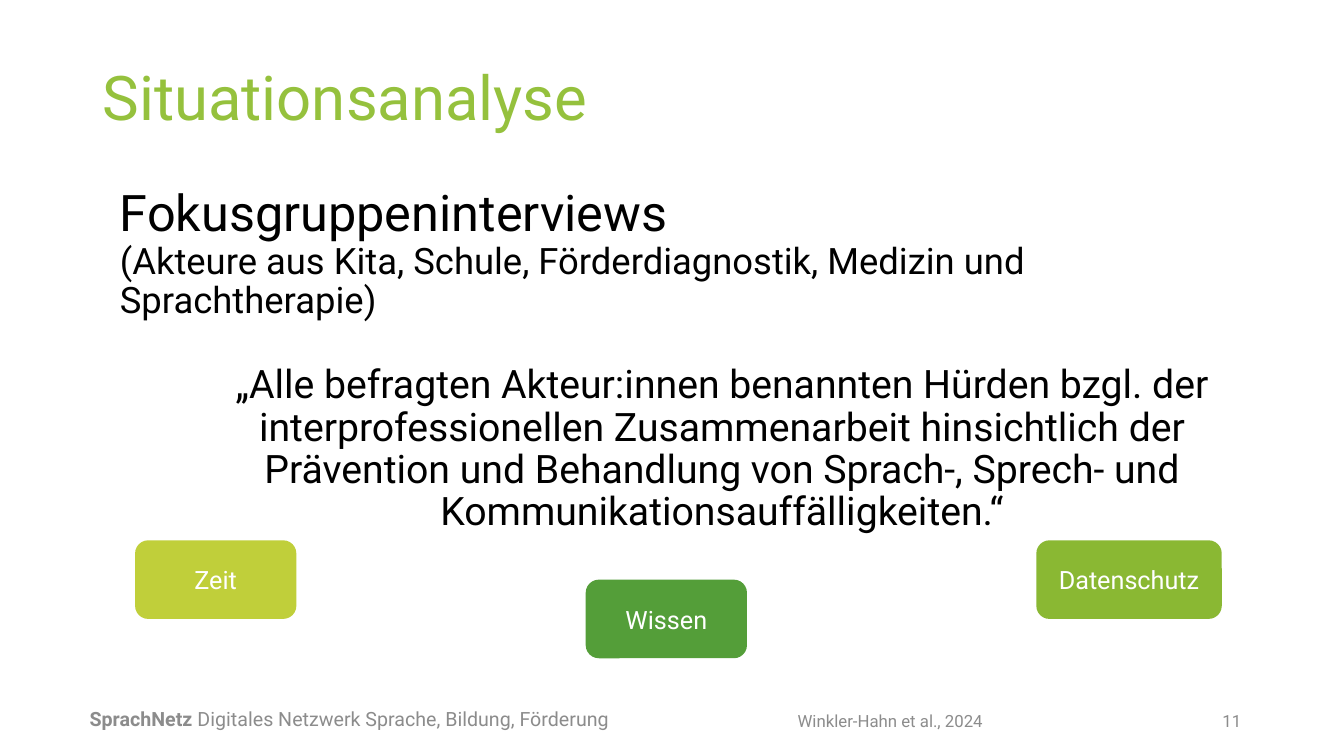
from dataclasses import dataclass

from pptx import Presentation
from pptx.dml.color import RGBColor
from pptx.enum.shapes import MSO_SHAPE
from pptx.enum.text import MSO_ANCHOR, PP_ALIGN
from pptx.util import Inches, Pt


@dataclass(frozen=True)
class Theme:
    font: str = "Roboto"
    title: str = "95C13D"
    body: str = "000000"
    muted: str = "8C8C8C"
    label: str = "FFFFFF"
    lime: str = "C0CF3A"
    forest: str = "549E39"
    leaf: str = "8AB833"
    title_size: int = 44
    heading_size: int = 36
    quote_size: int = 28
    detail_size: int = 26
    label_size: int = 18
    footer_size: int = 14
    note_size: int = 12


class SlideBuilder:
    """Places styled text and labels on a slide using a grid of 100 columns and 100 rows."""

    def __init__(self, deck, theme):
        self.deck = deck
        self.theme = theme
        self.slide = deck.slides.add_slide(deck.slide_layouts[6])

    def place(self, left, top, width, height):
        column = self.deck.slide_width / 100
        row = self.deck.slide_height / 100
        return (round(left * column), round(top * row),
                round(width * column), round(height * row))

    def style(self, span, size, color, bold=False):
        span.font.name = self.theme.font
        span.font.size = Pt(size)
        span.font.bold = bold
        span.font.color.rgb = RGBColor.from_string(color)

    def text(self, area, text, sizes, color, align=PP_ALIGN.LEFT,
             anchor=MSO_ANCHOR.MIDDLE, spacing=1.0):
        box = self.slide.shapes.add_textbox(*self.place(*area))
        frame = box.text_frame
        frame.word_wrap = True
        frame.vertical_anchor = anchor
        para = frame.paragraphs[0]
        para.text = text
        para.alignment = align
        para.line_spacing = spacing
        for span, size in zip(para.runs, sizes):
            self.style(span, size, color)
        return para

    def footer(self, area, name, claim):
        size, color = self.theme.footer_size, self.theme.muted
        para = self.text(area, name, [size], color)
        para.runs[0].font.bold = True
        span = para.add_run()
        span.text = claim
        self.style(span, size, color)

    def label(self, area, text, fill):
        box = self.slide.shapes.add_shape(MSO_SHAPE.ROUNDED_RECTANGLE, *self.place(*area))
        box.shadow.inherit = False
        box.fill.solid()
        box.fill.fore_color.rgb = RGBColor.from_string(fill)
        box.line.fill.background()
        frame = box.text_frame
        frame.text = text
        frame.word_wrap = True
        frame.vertical_anchor = MSO_ANCHOR.MIDDLE
        para = frame.paragraphs[0]
        para.alignment = PP_ALIGN.CENTER
        self.style(para.runs[0], self.theme.label_size, self.theme.label)


def main():
    theme = Theme()
    deck = Presentation()
    deck.slide_width = Inches(13.33)
    deck.slide_height = Inches(7.5)
    page = SlideBuilder(deck, theme)

    page.footer((5.93, 92.4, 57.6, 5.33), "SprachNetz",
                " Digitales Netzwerk Sprache, Bildung, Förderung")
    page.text((8.18, 24.27, 88.07, 19.07),
              "Fokusgruppeninterviews\v"
              "(Akteure aus Kita, Schule, Förderdiagnostik, Medizin und Sprachtherapie)",
              [theme.heading_size, theme.detail_size], theme.body,
              anchor=MSO_ANCHOR.TOP, spacing=0.9)
    page.text((6.9, 5.33, 86.27, 16), "Situationsanalyse",
              [theme.title_size], theme.title, spacing=0.9)
    page.text((46.06, 92.67, 40.36, 5.33), "Winkler-Hahn et al., 2024",
              [theme.note_size], theme.muted, PP_ALIGN.CENTER)
    page.text((87.47, 92.67, 5.63, 5.33), "11",
              [theme.note_size], theme.muted, PP_ALIGN.RIGHT)
    page.text((14.33, 47.6, 78.77, 42.53),
              "„Alle befragten Akteur:innen benannten Hürden bzgl. der "
              "interprofessionellen Zusammenarbeit hinsichtlich der Prävention und "
              "Behandlung von Sprach-, Sprech- und Kommunikationsauffälligkeiten.“",
              [theme.quote_size], theme.body, PP_ALIGN.CENTER, MSO_ANCHOR.TOP, 0.9)

    hurdles = [
        ("Zeit", theme.lime, 71.47, 12),
        ("Wissen", theme.forest, 76.67, 12),
        ("Datenschutz", theme.leaf, 71.47, 13.8),
    ]
    for index, (name, fill, top, width) in enumerate(hurdles):
        page.label((10.05 + index * 33.53, top, width, 10.4), name, fill)

    deck.save("out.pptx")


if __name__ == "__main__":
    main()
